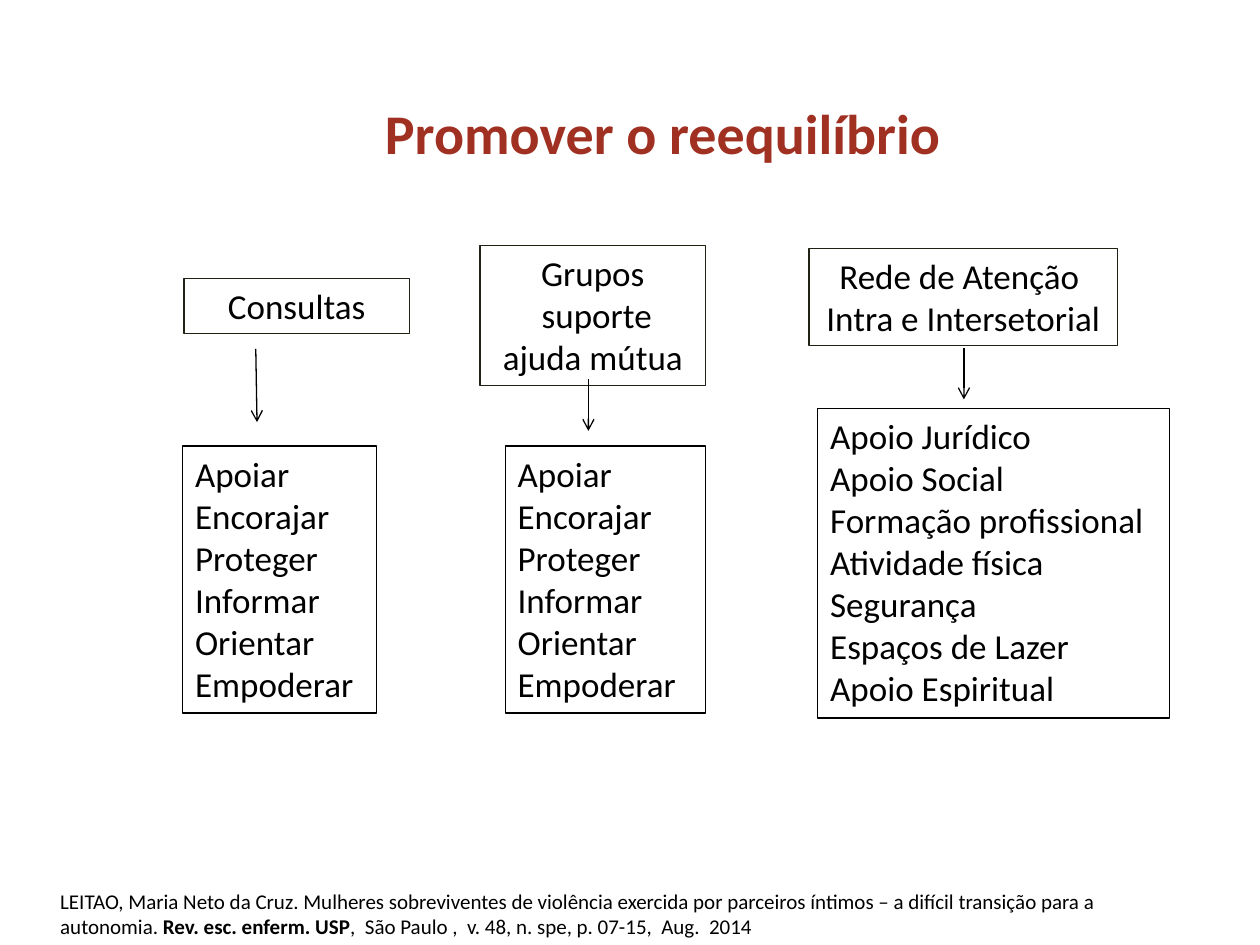
from lxml import etree
from pptx import Presentation
from pptx.dml.color import RGBColor
from pptx.enum.shapes import MSO_CONNECTOR, MSO_SHAPE
from pptx.enum.text import MSO_ANCHOR, PP_ALIGN
from pptx.oxml.ns import qn
from pptx.util import Inches, Pt

LEFT, CENTER = PP_ALIGN.LEFT, PP_ALIGN.CENTER
TOP = MSO_ANCHOR.TOP
RECT, STRAIGHT = MSO_SHAPE.RECTANGLE, MSO_CONNECTOR.STRAIGHT
FONT = "Calibri"
BLACK, RED, OLIVE = "000000", "A03021", "1E2314"

SUPPORT = ["Apoiar", "Encorajar", "Proteger", "Informar", "Orientar", "Empoderar"]
NETWORK = ["Apoio Jurídico", "Apoio Social", "Formação profissional",
           "Atividade física", "Segurança", "Espaços de Lazer", "Apoio Espiritual"]

COLUMNS = [
    (["Consultas"], (1.46, 2.21, 1.79, 0.44),
     (2.03, 2.77, 2.04, 3.35), SUPPORT, (1.45, 3.54, 1.54, 2.12)),
    (["Grupos", " suporte ajuda mútua"], (3.81, 1.95, 1.79, 1.11),
     (4.67, 3.01, 4.67, 3.42), SUPPORT, (4.01, 3.54, 1.59, 2.12)),
    (["Rede de Atenção  Intra e Intersetorial"], (6.42, 1.97, 2.45, 0.77),
     (7.65, 2.76, 7.65, 3.17), NETWORK, (6.49, 3.24, 2.79, 2.46)),
]

CITATION = [
    ("LEITAO, Maria Neto da Cruz. Mulheres sobreviventes de violência exercida "
     "por parceiros íntimos – a difícil transição para a autonomia.", False),
    (" Rev. esc. enferm. USP", True),
    (",  São Paulo ,  v. 48, n. spe, p. 07-15,  Aug.  2014", False),
]


def color(value):
    return RGBColor.from_string(value)


def inches(box):
    return [Inches(n) for n in box]


def style_text(tf, size, align=LEFT, rgb=BLACK, bold=False):
    tf.word_wrap = True
    tf.vertical_anchor = TOP
    for p in tf.paragraphs:
        p.alignment = align
        for r in p.runs:
            r.font.name = FONT
            r.font.size = Pt(size)
            r.font.bold = bold
            r.font.color.rgb = color(rgb)


def add_title(s, box, text):
    sp = s.shapes.title
    sp.left, sp.top, sp.width, sp.height = inches(box)
    sp.text_frame.text = text
    style_text(sp.text_frame, 32, CENTER, RED, True)


def add_box(s, box, lines, align, outline):
    sp = s.shapes.add_shape(RECT, *inches(box))
    sp.shadow.inherit = False
    sp.fill.background()
    sp.line.color.rgb = color(outline)
    sp.line.width = Pt(0.75)
    sp.text_frame.text = "\n".join(lines)
    style_text(sp.text_frame, 20, align)


def add_arrow(s, ends):
    line = s.shapes.add_connector(STRAIGHT, *inches(ends))
    line.line.color.rgb = color(BLACK)
    line.line.width = Pt(0.75)
    ln = line.line._get_or_add_ln()
    etree.SubElement(ln, qn("a:tailEnd"), type="arrow")
    etree.SubElement(ln.getparent(), qn("a:effectLst"))


def add_column(s, heading, heading_box, arrow, items, items_box):
    add_box(s, heading_box, heading, CENTER, OLIVE)
    add_box(s, items_box, items, LEFT, BLACK)
    add_arrow(s, arrow)


def add_citation(s, box, parts):
    tf = s.shapes.add_textbox(*inches(box)).text_frame
    p = tf.paragraphs[0]
    for text, _ in parts:
        p.add_run().text = text
    style_text(tf, 12)
    for r, (_, bold) in zip(p.runs, parts):
        r.font.bold = bold


def main():
    prs = Presentation()
    prs.slide_width, prs.slide_height = Inches(10), Inches(7.5)
    s = prs.slides.add_slide(prs.slide_layouts[5])
    add_title(s, (1.65, 0.73, 7.22, 0.64), "Promover o reequilíbrio")
    for column in COLUMNS:
        add_column(s, *column)
    add_citation(s, (0.38, 7, 9.1, 0.5), CITATION)
    prs.save("out.pptx")


if __name__ == "__main__":
    main()
